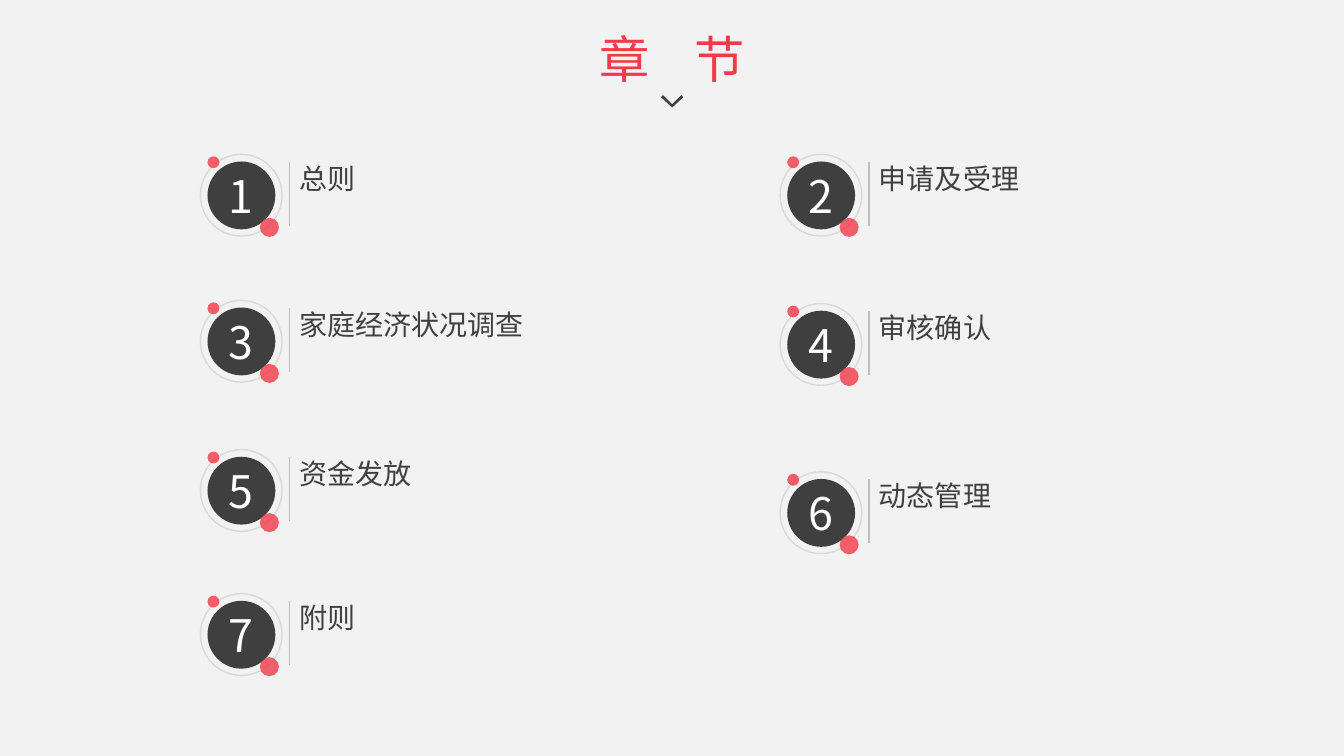
from lxml import etree
from pptx import Presentation, util as u
from pptx.dml.color import RGBColor
from pptx.enum import shapes, text
from pptx.oxml import ns

FONT = "Noto Sans CJK SC"
RED, DARK = "F23B48", "3F3F3F"
LEFT, RIGHT = 5.05, 19.66
CHAPTERS = [
    ("总则", LEFT, 3.89),
    ("申请及受理", RIGHT, 3.89),
    ("家庭经济状况调查", LEFT, 7.57),
    ("审核确认", RIGHT, 7.65),
    ("资金发放", LEFT, 11.33),
    ("动态管理", RIGHT, 11.89),
    ("附则", LEFT, 14.96),
]


def colour(value):
    """Turn a hex string into a colour."""
    return RGBColor.from_string(value)


def cm(*lengths):
    """Turn centimetres into slide lengths."""
    return [u.Cm(length) for length in lengths]


def set_values(target, values):
    """Set every attribute named in a dict of format values."""
    for name, value in values.items():
        setattr(target, name, value)


def write(box, content, size, ink, align, **frame_values):
    """Write one paragraph into a shape, one span for each piece of content."""
    set_values(box.text_frame, {"word_wrap": True, **frame_values})
    para = box.text_frame.paragraphs[0]
    para.alignment = align
    for piece in content:
        span = para.add_run()
        span.text = piece
        set_values(span.font, {"name": FONT, "size": u.Pt(size)})
        span.font.color.rgb = colour(ink)
        east = etree.SubElement(span.font._element, ns.qn("a:ea"))
        east.set("typeface", FONT)
    return para


def paint(shape, fill=None, line=None, alpha=None):
    """Give a shape its fill and line, without a shadow."""
    shape.shadow.inherit = False
    if fill:
        shape.fill.solid()
        shape.fill.fore_color.rgb = colour(fill)
    else:
        shape.fill.background()
    if line:
        shape.line.color.rgb = colour(line)
        shape.line.width = u.Pt(1)
    else:
        shape.line.fill.background()
    if alpha:
        tone = shape._element.spPr.find(".//" + ns.qn("a:srgbClr"))
        etree.SubElement(tone, ns.qn("a:alpha")).set("val", str(alpha * 1000))
    return shape


def add_circle(parts, left, top, size, **look):
    """Add a painted circle."""
    circle = parts.add_shape(shapes.MSO_SHAPE.OVAL, *cm(left, top, size, size))
    return paint(circle, **look)


def add_title(page, left, top, width, height):
    """Add the heading with the chevron below it."""
    box = page.shapes.add_textbox(*cm(left, top, width, height))
    para = write(box, ["章", " ", "节"], 36, RED, text.PP_ALIGN.CENTER,
                 auto_size=text.MSO_AUTO_SIZE.SHAPE_TO_FIT_TEXT)
    para.runs[1].font._element.set("spc", "2400")

    middle, tip = left + width / 2, top + height + 0.33
    outline = [(0.23, -0.31), (0.28, -0.26), (0, 0), (-0.28, -0.26), (-0.23, -0.31), (0, -0.08)]
    points = [tuple(cm(middle + x, tip + y)) for x, y in outline]
    builder = page.shapes.build_freeform(*points[0])
    builder.add_line_segments(points[1:], close=True)
    paint(builder.convert_to_shape(), fill=DARK)


def add_chapter(page, number, name, left, top):
    """Add a numbered badge with its rule and chapter name."""
    parts = page.shapes.add_group_shape().shapes
    disc = add_circle(parts, left + 0.18, top + 0.18, 1.71, fill=DARK)
    margins = dict.fromkeys(["margin_left", "margin_right", "margin_top", "margin_bottom"], 0)
    write(disc, [str(number)], 32, "FFFFFF", text.PP_ALIGN.CENTER,
          vertical_anchor=text.MSO_ANCHOR.MIDDLE, **margins)
    add_circle(parts, left, top, 2.06, line="D9D9D9")
    for x, y, size in [(1.5, 1.6, 0.48), (0.18, 0.05, 0.3)]:
        add_circle(parts, left + x, top + y, size, fill=RED, alpha=80)

    side = left + 2.24
    label = parts.add_textbox(*cm(side, top + 0.05, 6.27, 1.12))
    write(label, [name], 20, "404040", text.PP_ALIGN.JUSTIFY,
          auto_size=text.MSO_AUTO_SIZE.SHAPE_TO_FIT_TEXT)
    rule = parts.add_connector(shapes.MSO_CONNECTOR.STRAIGHT,
                               *cm(side, top + 0.18, side, top + 1.8))
    rule.line.color.rgb = colour("BFBFBF")
    rule.line.width = u.Pt(1)
    etree.SubElement(rule._element.spPr, ns.qn("a:effectLst"))


def main():
    """Build the chapter slide and save it."""
    deck = Presentation()
    set_values(deck, {"slide_width": u.Cm(33.87), "slide_height": u.Cm(19.05)})
    page = deck.slides.add_slide(deck.slide_layouts[6])
    page.background.fill.solid()
    page.background.fill.fore_color.rgb = colour("F2F2F2")
    add_title(page, 13.31, 0.58, 7.26, 1.8)
    for number, chapter in enumerate(CHAPTERS, 1):
        add_chapter(page, number, *chapter)
    deck.save("out.pptx")


if __name__ == "__main__":
    main()
